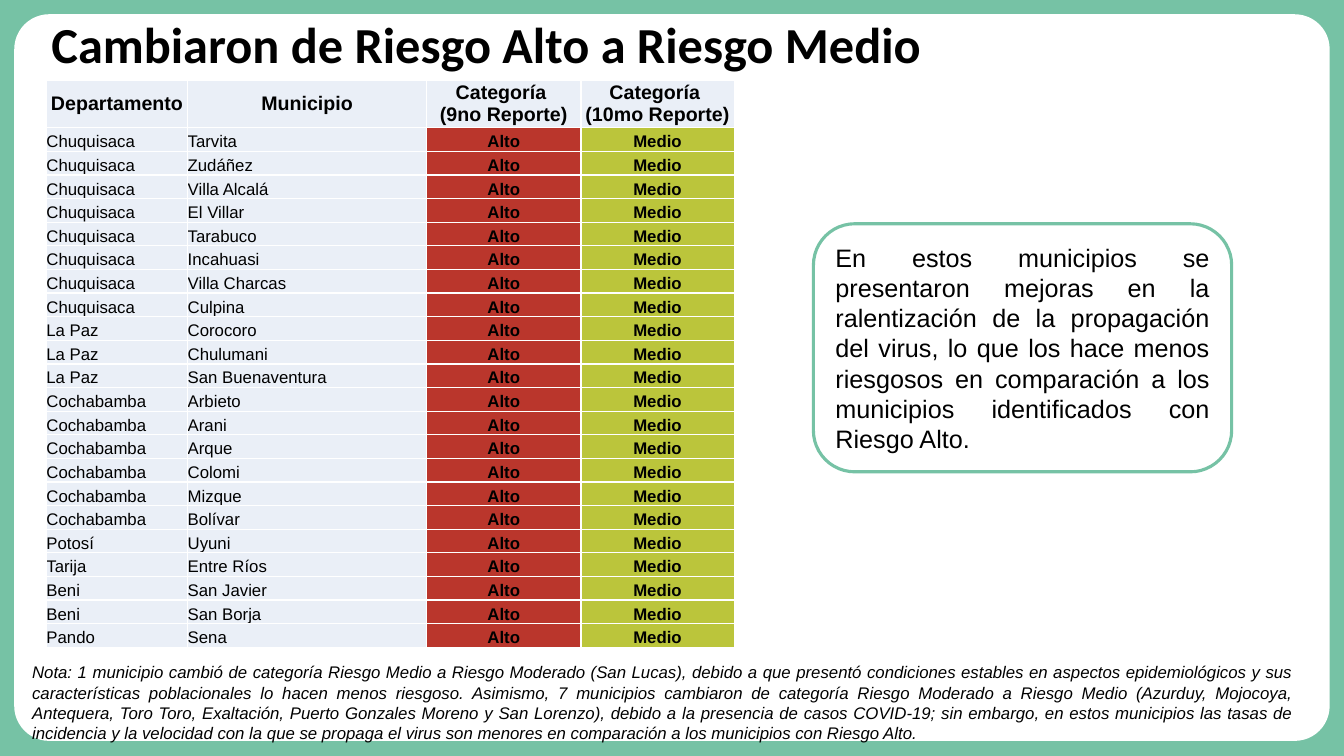
import pptx
import pptx.dml.color
import pptx.enum.shapes
import pptx.enum.text
import pptx.oxml
import pptx.oxml.ns
import pptx.util

Cm = pptx.util.Cm
Pt = pptx.util.Pt
Align = pptx.enum.text.PP_ALIGN
Anchor = pptx.enum.text.MSO_ANCHOR

COLORS = {
    "green": "76C2A5",
    "white": "FFFFFF",
    "black": "000000",
    "pale": "EAEFF7",
    "high": "BA362C",
    "medium": "BBC53B",
}

TITLE = "Cambiaron de Riesgo Alto a Riesgo Medio"
HEADERS = ["Departamento", "Municipio", "Categoría \n(9no Reporte)",
           "Categoría \n(10mo Reporte)"]
MUNICIPALITIES = {
    "Chuquisaca": ["Tarvita", "Zudáñez", "Villa Alcalá", "El Villar", "Tarabuco",
                   "Incahuasi", "Villa Charcas", "Culpina"],
    "La Paz": ["Corocoro", "Chulumani", "San Buenaventura"],
    "Cochabamba": ["Arbieto", "Arani", "Arque", "Colomi", "Mizque", "Bolívar"],
    "Potosí": ["Uyuni"],
    "Tarija": ["Entre Ríos"],
    "Beni": ["San Javier", "San Borja"],
    "Pando": ["Sena"],
}
COLUMN_WIDTHS = [3.56, 6.02, 3.89, 3.86]
HEADER_HEIGHT = 1.19
MESSAGE = (
    "En estos municipios se presentaron mejoras en la ralentización de la "
    "propagación del virus, lo que los hace menos riesgosos en comparación a los "
    "municipios identificados con Riesgo Alto."
)
NOTE = (
    "Nota: 1 municipio cambió de categoría Riesgo Medio a Riesgo Moderado (San "
    "Lucas), debido a que presentó condiciones estables en aspectos "
    "epidemiológicos y sus características poblacionales lo hacen menos riesgoso. "
    "Asimismo, 7 municipios cambiaron de categoría Riesgo Moderado a Riesgo Medio "
    "(Azurduy, Mojocoya, Antequera, Toro Toro, Exaltación, Puerto Gonzales Moreno "
    "y San Lorenzo), debido a la presencia de casos COVID-19; sin embargo, en "
    "estos municipios las tasas de incidencia y la velocidad con la que se propaga "
    "el virus son menores en comparación a los municipios con Riesgo Alto."
)


def color(name):
    return pptx.dml.color.RGBColor.from_string(COLORS[name])


def write(frame, text, size, align, font="Arial", bold=False, italic=False):
    frame.text = text
    frame.word_wrap = True
    for para in frame.paragraphs:
        para.alignment = align
        para.font.name = font
        para.font.size = Pt(size)
        para.font.bold = bold
        para.font.italic = italic
        para.font.color.rgb = color("black")


def add_rounded(page, left, top, width, height):
    box = page.shapes.add_shape(pptx.enum.shapes.MSO_SHAPE.ROUNDED_RECTANGLE,
                                Cm(left), Cm(top), Cm(width), Cm(height))
    box.shadow.inherit = False
    return box


def add_background(page, left, top, width, height):
    page.background.fill.solid()
    page.background.fill.fore_color.rgb = color("green")
    panel = add_rounded(page, left, top, width, height)
    panel.adjustments[0] = 0.048
    panel.fill.solid()
    panel.fill.fore_color.rgb = color("white")
    panel.line.fill.background()
    # The panel lies behind the title
    page.shapes.title.element.addprevious(panel.element)


def add_title(page, left, top, width, height):
    title = page.shapes.title
    title.left, title.top = Cm(left), Cm(top)
    title.width, title.height = Cm(width), Cm(height)
    frame = title.text_frame
    write(frame, TITLE, 36, Align.LEFT, font="Calibri", bold=True)
    frame.auto_size = pptx.enum.text.MSO_AUTO_SIZE.NONE
    frame.vertical_anchor = Anchor.MIDDLE
    frame.paragraphs[0].line_spacing = 0.9


def add_borders(cell):
    properties = cell._tc.get_or_add_tcPr()
    for index, side in enumerate(["lnL", "lnR", "lnT", "lnB"]):
        properties.insert(index, pptx.oxml.parse_xml(
            f'<a:{side} {pptx.oxml.ns.nsdecls("a")} w="12700"><a:solidFill>'
            f'<a:srgbClr val="{COLORS["white"]}"/></a:solidFill></a:{side}>'))


def fill_cell(cell, text, fill, size, align, anchor, bold):
    cell.margin_left = cell.margin_right = cell.margin_top = cell.margin_bottom = 0
    cell.vertical_anchor = anchor
    cell.fill.solid()
    cell.fill.fore_color.rgb = color(fill)
    write(cell.text_frame, text, size, align, bold=bold)
    add_borders(cell)


def add_risk_table(page, left, top, height):
    records = [[department, town, "Alto", "Medio"]
               for department, towns in MUNICIPALITIES.items() for town in towns]
    table = page.shapes.add_table(len(records) + 1, len(HEADERS), Cm(left), Cm(top),
                                  Cm(sum(COLUMN_WIDTHS)), Cm(height)).table
    for column, width in zip(table.columns, COLUMN_WIDTHS):
        column.width = Cm(width)
    for row in table.rows:
        row.height = Cm((height - HEADER_HEIGHT) / len(records))
    table.rows[0].height = Cm(HEADER_HEIGHT)

    # Header row
    for cell, text in zip(table.rows[0].cells, HEADERS):
        fill_cell(cell, text, "pale", 14, Align.CENTER, Anchor.MIDDLE, True)

    # One row per municipality
    fills = ["pale", "pale", "high", "medium"]
    for number, record in enumerate(records, 1):
        for cell, text, fill in zip(table.rows[number].cells, record, fills):
            is_risk = fill != "pale"
            align = Align.CENTER if is_risk else Align.LEFT
            fill_cell(cell, text, fill, 12, align, Anchor.BOTTOM, is_risk)


def add_message(page, left, top, width, height):
    box = add_rounded(page, left, top, width, height)
    box.fill.background()
    box.line.color.rgb = color("green")
    box.line.width = Pt(2.25)
    write(box.text_frame, MESSAGE, 18, Align.JUSTIFY)
    box.text_frame.vertical_anchor = Anchor.MIDDLE


def add_note(page, left, top, width, height):
    box = page.shapes.add_textbox(Cm(left), Cm(top), Cm(width), Cm(height))
    write(box.text_frame, NOTE, 12, Align.JUSTIFY, italic=True)


def main():
    deck = pptx.Presentation()
    deck.slide_width, deck.slide_height = Cm(33.87), Cm(19.05)
    page = deck.slides.add_slide(deck.slide_layouts.get_by_name("Title Only"))
    add_background(page, 0.36, 0.36, 33.15, 18.31)
    add_title(page, 1.04, 0.58, 29.21, 1.22)
    add_message(page, 20.5, 5.64, 10.54, 6.25)
    add_risk_table(page, 1.17, 2.03, 14.3)
    add_note(page, 0.56, 16.56, 32.31, 2.31)
    deck.save("out.pptx")


if __name__ == "__main__":
    main()
